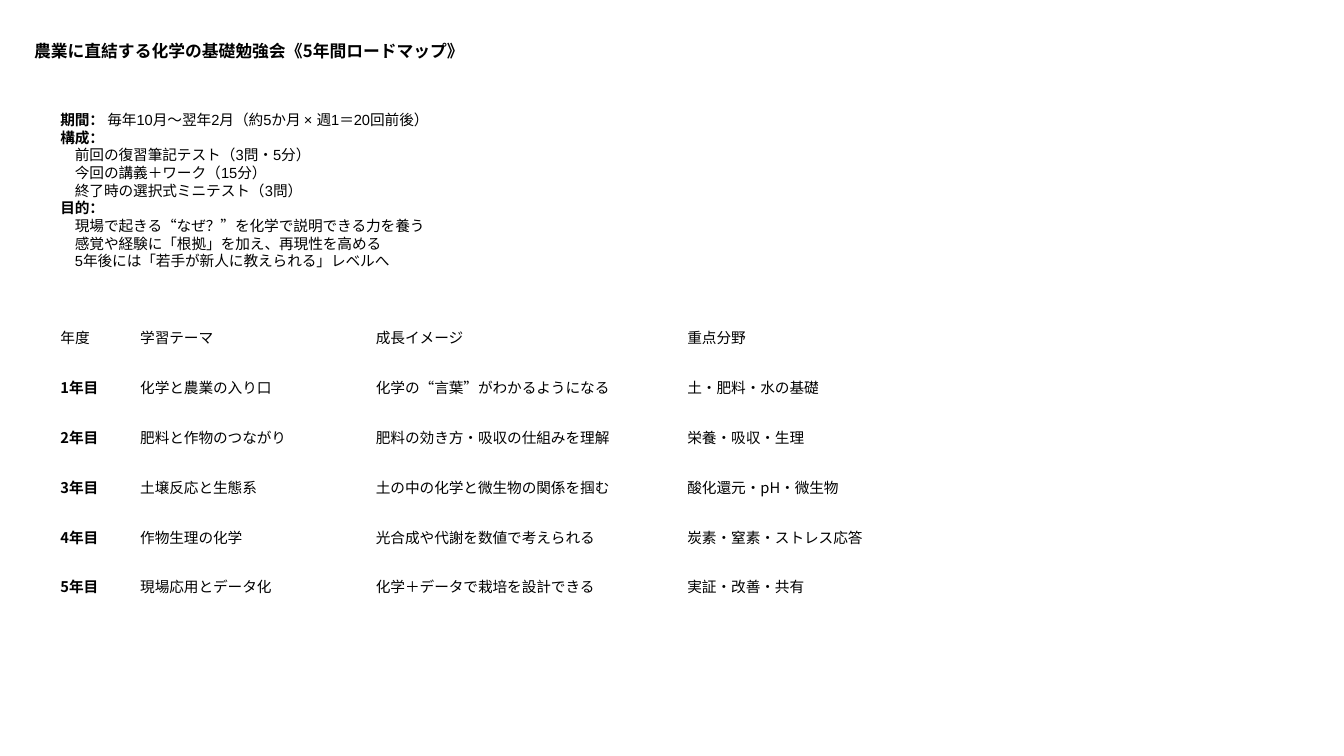
from lxml.etree import SubElement
from pptx import Presentation
from pptx.dml.color import RGBColor
from pptx.enum.text import MSO_ANCHOR
from pptx.oxml.ns import qn
from pptx.util import Cm, Pt

BLACK = RGBColor(0, 0, 0)
JAPANESE_FONT = "Noto Sans CJK JP"
LATIN_FONT = "Arial"
BODY_SIZE = 10.5
LINE_RATIO = 1.2

TITLE = "農業に直結する化学の基礎勉強会《5年間ロードマップ》"
OUTLINE = [
    ("期間：", " 毎年10月〜翌年2月（約5か月 × 週1＝20回前後）"),
    ("構成：", ""),
    ("", "　前回の復習筆記テスト（3問・5分）"),
    ("", "　今回の講義＋ワーク（15分）"),
    ("", "　終了時の選択式ミニテスト（3問）"),
    ("目的：", ""),
    ("", "　現場で起きる“なぜ？”を化学で説明できる力を養う"),
    ("", "　感覚や経験に「根拠」を加え、再現性を高める"),
    ("", "　5年後には「若手が新人に教えられる」レベルへ"),
]
ROADMAP = [
    ("年度", "学習テーマ", "成長イメージ", "重点分野"),
    ("1年目", "化学と農業の入り口", "化学の“言葉”がわかるようになる", "土・肥料・水の基礎"),
    ("2年目", "肥料と作物のつながり", "肥料の効き方・吸収の仕組みを理解", "栄養・吸収・生理"),
    ("3年目", "土壌反応と生態系", "土の中の化学と微生物の関係を掴む", "酸化還元・pH・微生物"),
    ("4年目", "作物生理の化学", "光合成や代謝を数値で考えられる", "炭素・窒素・ストレス応答"),
    ("5年目", "現場応用とデータ化", "化学＋データで栽培を設計できる", "実証・改善・共有"),
]
COLUMN_WIDTHS = [Cm(2.01), Cm(5.94), Cm(7.85), Cm(6.22)]


def format_run(run, size, bold, latin_font=JAPANESE_FONT):
    run.font.size = Pt(size)
    run.font.bold = bold
    run.font.name = latin_font
    run.font.color.rgb = BLACK
    east_asian = SubElement(run.font._element, qn("a:ea"))
    east_asian.set("typeface", JAPANESE_FONT)


def add_text_frame(slide, left, top, width, height):
    text_frame = slide.shapes.add_textbox(left, top, width, height).text_frame
    text_frame.word_wrap = True
    return text_frame


def add_title(slide, left, top, width, height):
    text_frame = add_text_frame(slide, left, top, width, height)
    text_frame.text = TITLE
    paragraph = text_frame.paragraphs[0]
    paragraph.line_spacing = Pt(12 * LINE_RATIO)
    format_run(paragraph.runs[0], 12, True)


def add_outline(slide, left, top, width, height):
    text_frame = add_text_frame(slide, left, top, width, height)
    text_frame.text = "\n".join(label for label, detail in OUTLINE)
    for paragraph, (label, detail) in zip(text_frame.paragraphs, OUTLINE):
        paragraph.line_spacing = Pt(BODY_SIZE * LINE_RATIO)
        for run in paragraph.runs:
            format_run(run, BODY_SIZE, True, LATIN_FONT)
        if detail:
            run = paragraph.add_run()
            run.text = detail
            format_run(run, BODY_SIZE, False, LATIN_FONT)


def add_roadmap(slide, left, top, width, height):
    table = slide.shapes.add_table(
        len(ROADMAP), len(COLUMN_WIDTHS), left, top, width, height
    ).table
    table.first_row = False
    table.horz_banding = False
    for column, column_width in zip(table.columns, COLUMN_WIDTHS):
        column.width = column_width
    for row_index, texts in enumerate(ROADMAP):
        for column_index, text in enumerate(texts):
            cell = table.cell(row_index, column_index)
            cell.fill.background()
            cell.vertical_anchor = MSO_ANCHOR.MIDDLE
            cell.text_frame.text = text
            is_year = row_index > 0 and column_index == 0
            format_run(cell.text_frame.paragraphs[0].runs[0], BODY_SIZE, is_year)


def main():
    presentation = Presentation()
    presentation.slide_width = Cm(33.87)
    presentation.slide_height = Cm(19.05)
    slide = presentation.slides.add_slide(presentation.slide_layouts[6])
    add_roadmap(slide, Cm(1.27), Cm(7.87), sum(COLUMN_WIDTHS), Cm(7.54))
    add_title(slide, Cm(0.61), Cm(0.89), Cm(16.94), Cm(0.76))
    add_outline(slide, Cm(1.27), Cm(2.67), Cm(12.78), Cm(4.75))
    presentation.save("out.pptx")


if __name__ == "__main__":
    main()
